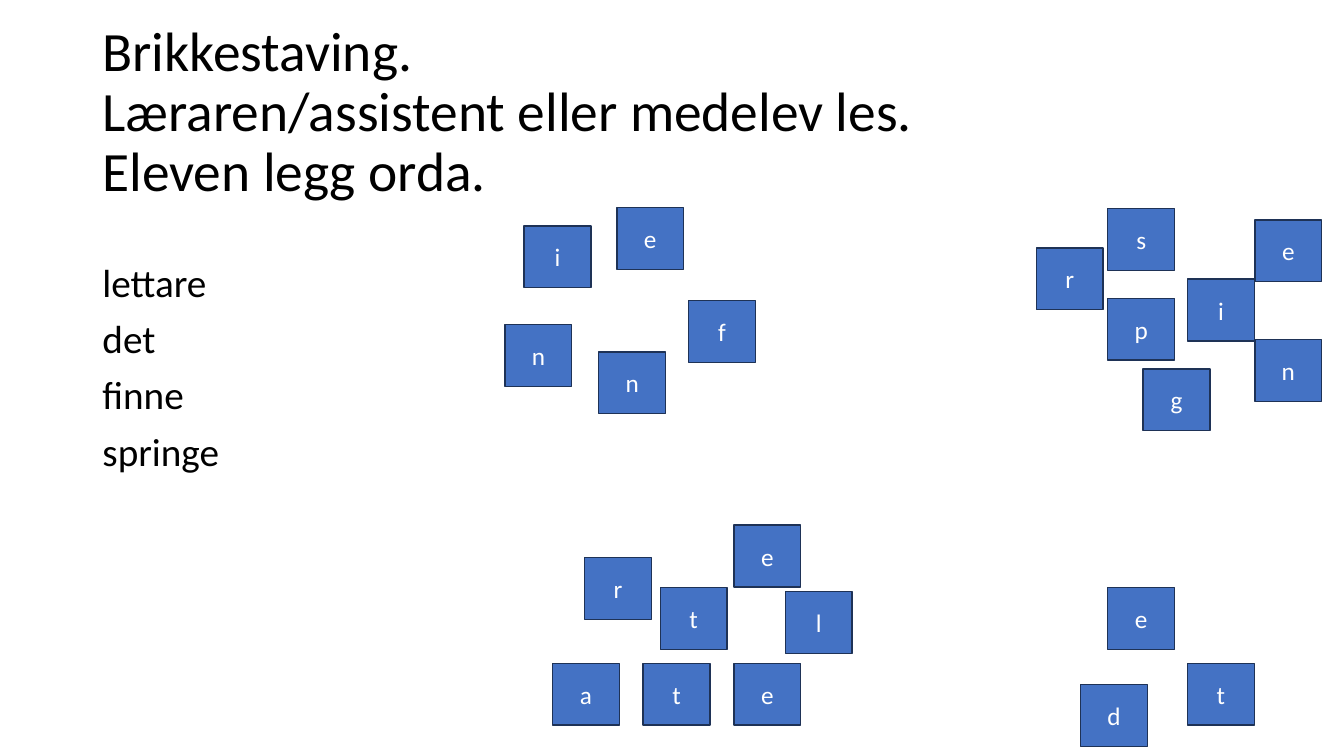
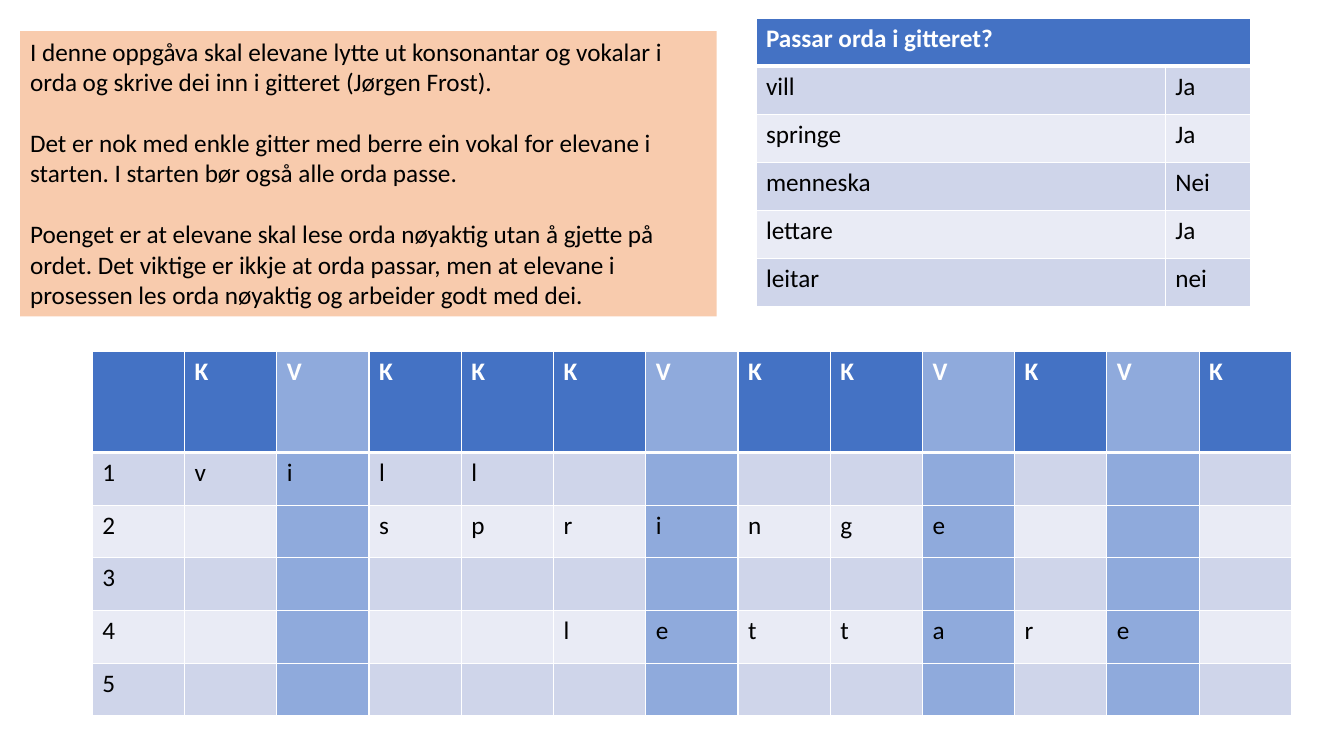
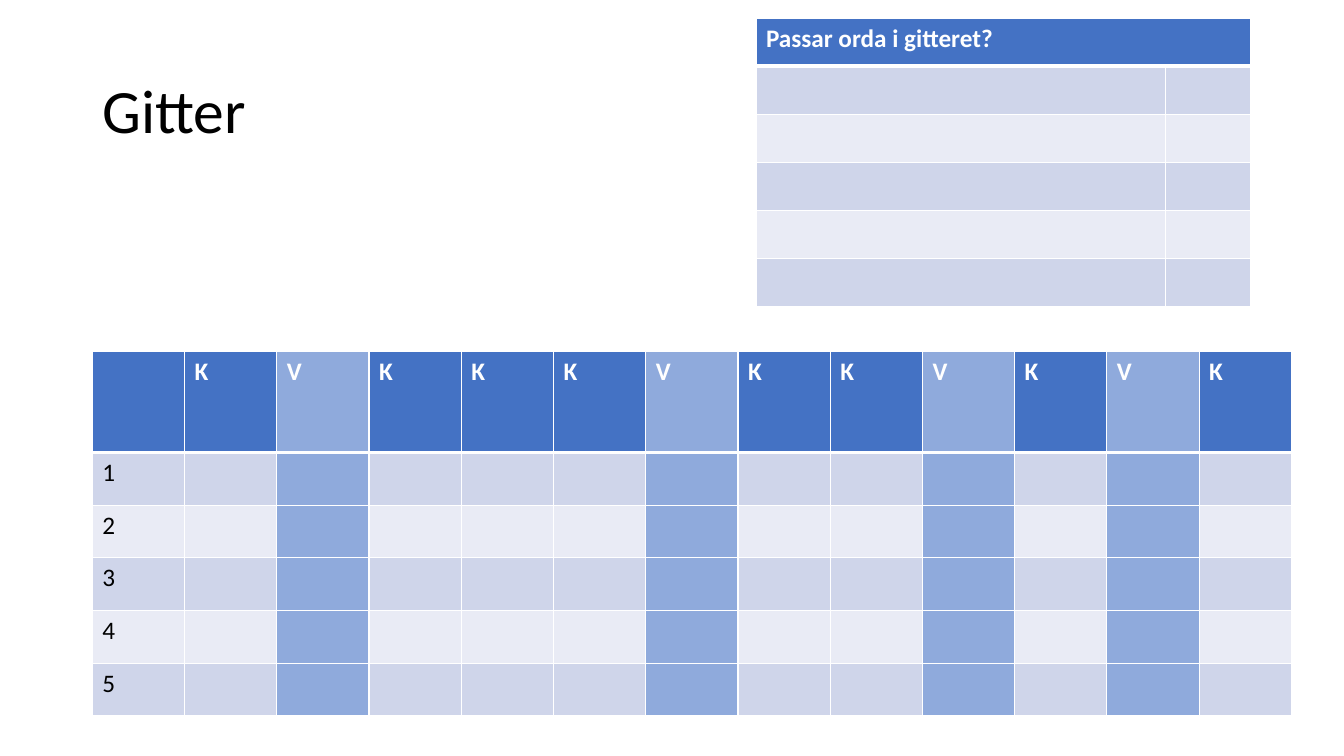
from dataclasses import dataclass
from lxml.etree import SubElement
from pptx import Presentation
from pptx.dml.color import RGBColor
from pptx.enum.shapes import MSO_SHAPE as Shape
from pptx.enum.text import MSO_ANCHOR as Anchor, MSO_AUTO_SIZE as Fit, PP_ALIGN as Align
from pptx.oxml import parse_xml
from pptx.oxml.ns import nsdecls, qn
from pptx.util import Pt


@dataclass(frozen=True)
class Theme:
    font: str = "Calibri"
    ink: str = "000000"
    white: str = "FFFFFF"
    blue: str = "4472C4"
    edge: str = "1E3256"
    vowel: str = "8FAADC"
    bands: tuple = ("CFD5EA", "E9EBF5")
    peach: str = "F8CBAD"
    head: float = 44
    small: float = 39.6
    list: float = 28
    text: float = 18


LOOK = Theme()
WIDTH, HEIGHT = 960, 540
TITLE = (66, 28.8, 828, 104.4)
BODY = (66, 144, 295.2, 342.7)
NOTE = (14.4, 22.3, 497.5, 203.8)
GRID = (66, 251.3)
CHECK = (540, 13)
TILE = (47.7, 44.2)

TASK = "Brikkestaving.\nLæraren/assistent eller medelev les.\nEleven legg orda."
WORDS = ["lettare", "det", "finne", "springe"]
TILES = {
    "finne": [("i", 374.4, 161.3), ("e", 440.6, 148.3), ("n", 360.7, 231.8),
              ("n", 427.7, 251.3), ("f", 491.8, 214.6)],
    "lettare": [("e", 524.2, 375.1), ("l", 560.9, 422.6), ("e", 524.2, 473.8),
                ("t", 471.6, 419.8), ("r", 417.6, 398.2), ("t", 459.4, 473.8),
                ("a", 394.6, 473.8)],
    "det": [("e", 791.3, 419.8), ("d", 771.8, 488.9), ("t", 848.2, 473.8)],
    "springe": [("g", 816.5, 263.5), ("r", 740.2, 177.1), ("n", 896.4, 242.6),
                ("p", 791.3, 213.1), ("i", 848.2, 199.4), ("s", 791.3, 149),
                ("e", 896.4, 157)],
}
NOTES = [
    "I denne oppgåva skal elevane lytte ut konsonantar og vokalar i orda og skrive dei inn i gitteret (Jørgen Frost).",
    "Det er nok med enkle gitter med berre ein vokal for elevane i starten. I starten bør også alle orda passe.",
    "Poenget er at elevane skal lese orda nøyaktig utan å gjette på ordet. Det viktige er ikkje at orda passar, "
    "men at elevane i prosessen les orda nøyaktig og arbeider godt med dei.",
]
SOUNDS = "KVKKKVKKVKVK"
ASK = "Passar orda i gitteret?"
PLACED = [("vill", 1), ("springe", 3), ("", 1), ("lettare", 5), ("", 1)]
OPEN = [("", 1)] * 5
REPLIES = [("vill", "Ja"), ("springe", "Ja"), ("menneska", "Nei"), ("lettare", "Ja"), ("leitar", "nei")]
BLANK = [("", "")] * 5


def tint(hue):
    return RGBColor.from_string(hue)


def style(para, size, hue, bold=False, align=Align.LEFT):
    para.alignment = align
    for run in para.runs:
        font = run.font
        font.name, font.size, font.bold = LOOK.font, Pt(size), bold
        font.color.rgb = tint(hue)


def place(item, spot):
    item.left, item.top, item.width, item.height = map(Pt, spot)


def add_title(slide, text, size):
    title = slide.shapes.title
    place(title, TITLE)
    frame = title.text_frame
    frame.auto_size = Fit.NONE
    frame.vertical_anchor = Anchor.MIDDLE
    para = frame.paragraphs[0]
    para.text = text
    para.line_spacing = 0.9
    style(para, size, LOOK.ink)


def add_list(slide, words):
    body = slide.placeholders[1]
    place(body, BODY)
    frame = body.text_frame
    frame.text = "\n".join(words)
    frame.auto_size = Fit.NONE
    frame.margin_top = Pt(44)
    for para in frame.paragraphs:
        para.line_spacing, para.space_before = 0.9, Pt(10)
        style(para, LOOK.list, LOOK.ink)
        props = para._p.get_or_add_pPr()
        props.set("marL", "0")
        props.set("indent", "0")
        SubElement(props, qn("a:buNone"))


def add_box(slide, spot, fill, edge=None):
    box = slide.shapes.add_shape(Shape.RECTANGLE, *map(Pt, spot))
    box.shadow.inherit = False
    box.fill.solid()
    box.fill.fore_color.rgb = tint(fill)
    if edge:
        box.line.color.rgb = tint(edge)
        box.line.width = Pt(1)
    else:
        box.line.fill.background()
    box.text_frame.word_wrap = True
    return box


def add_tile(slide, mark, left, top):
    tile = add_box(slide, (left, top, *TILE), LOOK.blue, LOOK.edge)
    frame = tile.text_frame
    frame.text = mark
    frame.vertical_anchor = Anchor.MIDDLE
    style(frame.paragraphs[0], LOOK.text, LOOK.white, align=Align.CENTER)


def add_note(slide, lines):
    frame = add_box(slide, NOTE, LOOK.peach).text_frame
    frame.text = "\n".join(lines)
    frame.vertical_anchor = Anchor.TOP
    for spot, para in enumerate(frame.paragraphs):
        para.space_before = Pt(22 if spot else 0)
        style(para, LOOK.text, LOOK.ink)


def rule(cell, row):
    props = cell._tc.get_or_add_tcPr()
    wide = {"L": 1, "R": 1, "T": 3 if row == 1 else 1, "B": 1 if row else 3}
    for spot, (side, width) in enumerate(wide.items()):
        props.insert(spot, parse_xml(
            f'<a:ln{side} {nsdecls("a")} w="{Pt(width)}"><a:solidFill>'
            f'<a:srgbClr val="{LOOK.white}"/></a:solidFill></a:ln{side}>'))


def add_table(slide, spot, data, cols, rows, vowels=()):
    size = (sum(cols), sum(rows))
    table = slide.shapes.add_table(len(rows), len(cols), *map(Pt, spot + size)).table
    for col, width in zip(table.columns, cols):
        col.width = Pt(width)
    for line, height in zip(table.rows, rows):
        line.height = Pt(height)
    for row, texts in enumerate(data):
        base = LOOK.bands[(row - 1) % 2] if row else LOOK.blue
        for col, text in enumerate(texts):
            cell = table.cell(row, col)
            cell.text = text
            cell.fill.solid()
            cell.fill.fore_color.rgb = tint(LOOK.vowel if col in vowels else base)
            rule(cell, row)
            hue = LOOK.ink if row else LOOK.white
            style(cell.text_frame.paragraphs[0], LOOK.text, hue, bold=not row)
    return table


def add_grid(slide, words):
    count = len(SOUNDS) + 1
    data = [["", *SOUNDS]]
    for row, (word, start) in enumerate(words, 1):
        line = [str(row)] + [""] * len(SOUNDS)
        line[start:start + len(word)] = word
        data.append(line)
    vowels = [col for col, sound in enumerate(SOUNDS, 1) if sound == "V"]
    add_table(slide, GRID, data, [65.9] * count, [72] + [37.6] * len(words), vowels)


def add_check(slide, pairs):
    data = [(ASK, ""), *pairs]
    table = add_table(slide, CHECK, data, [292.4, 61.2], [34.4] * len(data))
    table.cell(0, 0).merge(table.cell(0, 1))


def main():
    deck = Presentation()
    deck.slide_width, deck.slide_height = Pt(WIDTH), Pt(HEIGHT)
    both, head, bare = (deck.slide_layouts[spot] for spot in (1, 5, 6))

    slide = deck.slides.add_slide(both)
    add_title(slide, TASK, LOOK.small)
    add_list(slide, WORDS)
    for tiles in TILES.values():
        for tile in tiles:
            add_tile(slide, *tile)

    slide = deck.slides.add_slide(bare)
    add_grid(slide, PLACED)
    add_check(slide, REPLIES)
    add_note(slide, NOTES)

    slide = deck.slides.add_slide(head)
    add_title(slide, "Gitter", LOOK.head)
    add_grid(slide, OPEN)
    add_check(slide, BLANK)

    deck.save("out.pptx")


if __name__ == "__main__":
    main()
